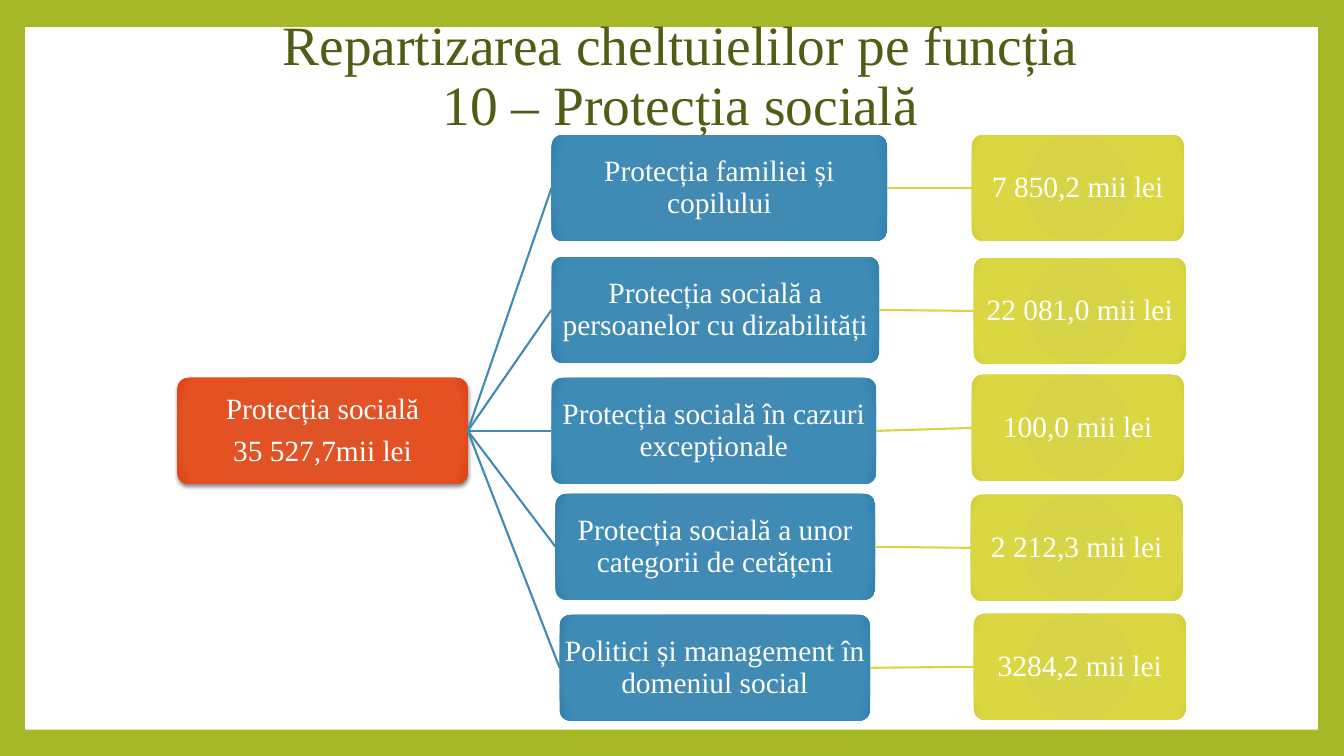
"""Builds a slide showing how social protection spending is split by branch."""
import pptx
import pptx.dml.color
import pptx.enum.shapes
import pptx.enum.text
import pptx.oxml
import pptx.oxml.ns
import pptx.util

RGBColor = pptx.dml.color.RGBColor
PX = pptx.util.Inches(1) // 100
FONT = "Times New Roman"
BOX_HEIGHT = 105
AMOUNT_WIDTH = 210
FRAME_GREEN = RGBColor(0xA6, 0xB7, 0x27)
TITLE_GREEN = RGBColor(0x53, 0x5C, 0x14)
WHITE = RGBColor(0xFF, 0xFF, 0xFF)
ORANGES = (RGBColor(0xDF, 0x53, 0x27), RGBColor(0xE4, 0x51, 0x22), RGBColor(0xDB, 0x43, 0x13))
BLUES = (RGBColor(0x41, 0x8A, 0xB3), RGBColor(0x3E, 0x8B, 0xB6), RGBColor(0x31, 0x80, 0xAD))
YELLOWS = (RGBColor(0xD7, 0xD4, 0x47), RGBColor(0xDB, 0xD7, 0x43), RGBColor(0xD0, 0xCD, 0x33))

BRANCHES = [
    ("Protecția familiei și copilului", (547, 134, 333), "7 850,2 mii lei", (964, 134)),
    ("Protecția socială a persoanelor cu dizabilități", (547, 255, 325), "22 081,0 mii lei", (966, 256)),
    ("Protecția socială în cazuri excepționale", (547, 375, 322), "100,0 mii lei", (964, 372)),
    ("Protecția socială a unor categorii de cetățeni", (551, 490, 317), "2 212,3 mii lei", (963, 491)),
    ("Politici și management în domeniul social", (555, 610, 308), "3284,2 mii lei", (966, 609)),
]


def px(*lengths):
    return [pptx.util.Emu(length * PX) for length in lengths]


def write(frame, *paragraphs, size=21, color=WHITE, after=7.35, margin=1):
    frame.word_wrap = True
    frame.auto_size = pptx.enum.text.MSO_AUTO_SIZE.NONE
    frame.vertical_anchor = pptx.enum.text.MSO_ANCHOR.MIDDLE
    frame.margin_left = frame.margin_right = frame.margin_top = frame.margin_bottom = px(margin)[0]
    frame.text = "\n".join(paragraphs)
    for paragraph in frame.paragraphs:
        paragraph.alignment = pptx.enum.text.PP_ALIGN.CENTER
        paragraph.line_spacing = 0.9
        paragraph.space_after = pptx.util.Pt(after)
        for run in paragraph.runs:
            run.font.name = FONT
            run.font.size = pptx.util.Pt(size)
            run.font.color.rgb = color


def shade(box, colors):
    box.fill.gradient()
    gradient = box._element.spPr.find(pptx.oxml.ns.qn("a:gradFill"))
    stops = "".join(
        f'<a:gs pos="{position}"><a:srgbClr val="{color}"/></a:gs>'
        for position, color in zip((0, 90000, 100000), colors))
    radial = pptx.oxml.parse_xml(
        f'<a:gradFill {pptx.oxml.ns.nsdecls("a")} rotWithShape="1"><a:gsLst>{stops}</a:gsLst>'
        '<a:path path="circle"><a:fillToRect l="100000" t="100000" r="100000" b="100000"/></a:path>'
        '</a:gradFill>')
    gradient.getparent().replace(gradient, radial)


def add_box(slide, left, top, width, colors, *paragraphs):
    box = slide.shapes.add_shape(
        pptx.enum.shapes.MSO_SHAPE.ROUNDED_RECTANGLE, *px(left, top, width, BOX_HEIGHT))
    box.adjustments[0] = 0.1
    box.shadow.inherit = False
    box.line.fill.background()
    shade(box, colors)
    write(box.text_frame, *paragraphs)
    return box


def drop_shadow(box):
    effects = box._element.spPr.find(pptx.oxml.ns.qn("a:effectLst"))
    effects.append(pptx.oxml.parse_xml(
        f'<a:outerShdw {pptx.oxml.ns.nsdecls("a")} blurRad="38100" dist="25400" dir="5400000" '
        'rotWithShape="0"><a:srgbClr val="000000"><a:alpha val="45000"/></a:srgbClr></a:outerShdw>'))


def link(slide, source, target, color):
    line = slide.shapes.add_connector(
        pptx.enum.shapes.MSO_CONNECTOR.STRAIGHT,
        source.left + source.width, source.top + source.height // 2,
        target.left, target.top + target.height // 2)
    line.line.color.rgb = color
    line.line.width = pptx.util.Pt(1.5)
    line._element.spPr.append(
        pptx.oxml.parse_xml(f'<a:effectLst {pptx.oxml.ns.nsdecls("a")}/>'))


def add_panel(slide):
    panel = slide.shapes.add_shape(
        pptx.enum.shapes.MSO_SHAPE.RECTANGLE, *px(25, 27, 1282, 697))
    panel.shadow.inherit = False
    panel.fill.solid()
    panel.fill.fore_color.rgb = WHITE
    panel.line.fill.background()
    slide.shapes._spTree.insert(2, panel._element)


def add_title(slide, text):
    title = slide.shapes.title
    title.left, title.top, title.width, title.height = px(150, 20, 1050, 113)
    write(title.text_frame, text, size=39.6, color=TITLE_GREEN, after=0, margin=5)


def main():
    deck = pptx.Presentation()
    deck.slide_width, deck.slide_height = pptx.util.Inches(13.33), pptx.util.Inches(7.5)
    slide = deck.slides.add_slide(deck.slide_layouts[5])
    slide.background.fill.solid()
    slide.background.fill.fore_color.rgb = FRAME_GREEN
    add_panel(slide)
    add_title(slide, "Repartizarea cheltuielilor pe funcția\v10 – Protecția socială")

    total = add_box(slide, 176, 375, 288, ORANGES, "Protecția socială", "35 527,7mii lei")
    drop_shadow(total)
    for purpose, purpose_place, amount, amount_place in BRANCHES:
        purpose_box = add_box(slide, *purpose_place, BLUES, purpose)
        amount_box = add_box(slide, *amount_place, AMOUNT_WIDTH, YELLOWS, amount)
        link(slide, total, purpose_box, BLUES[0])
        link(slide, purpose_box, amount_box, YELLOWS[0])
    deck.save("out.pptx")


if __name__ == "__main__":
    main()
